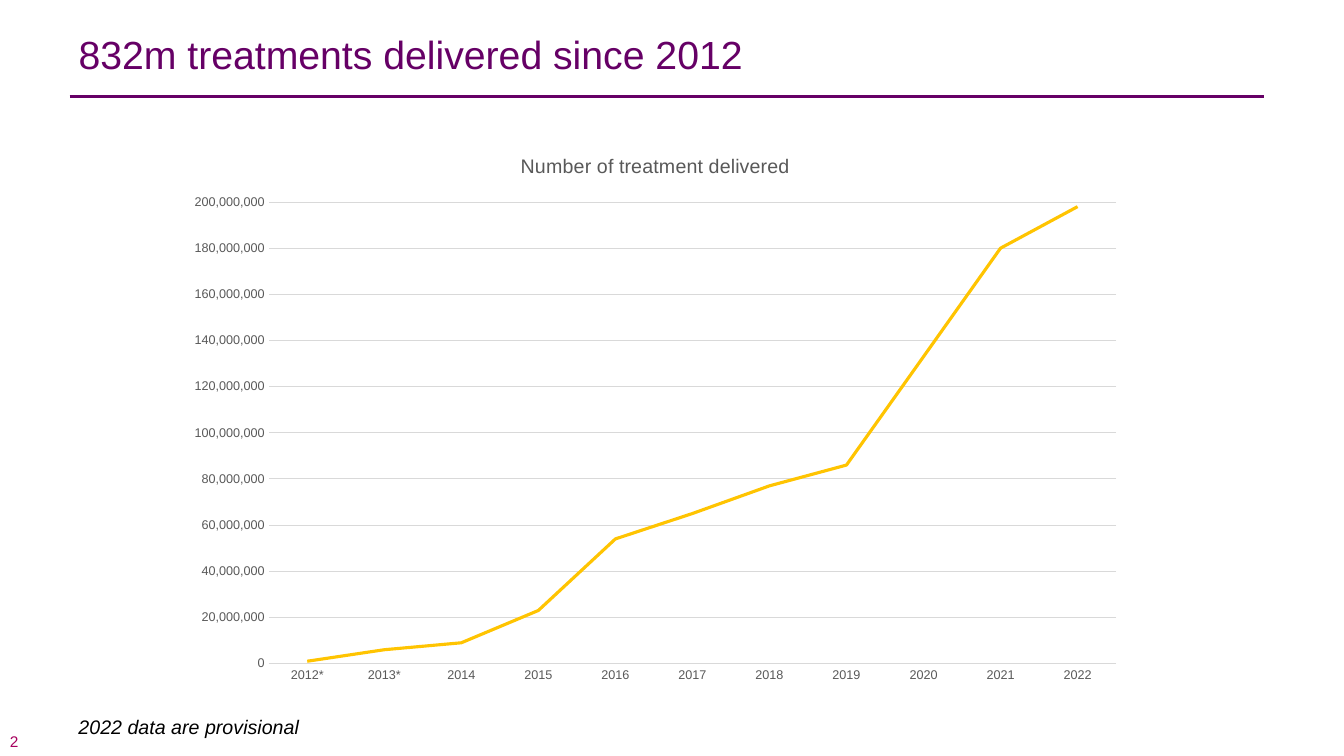
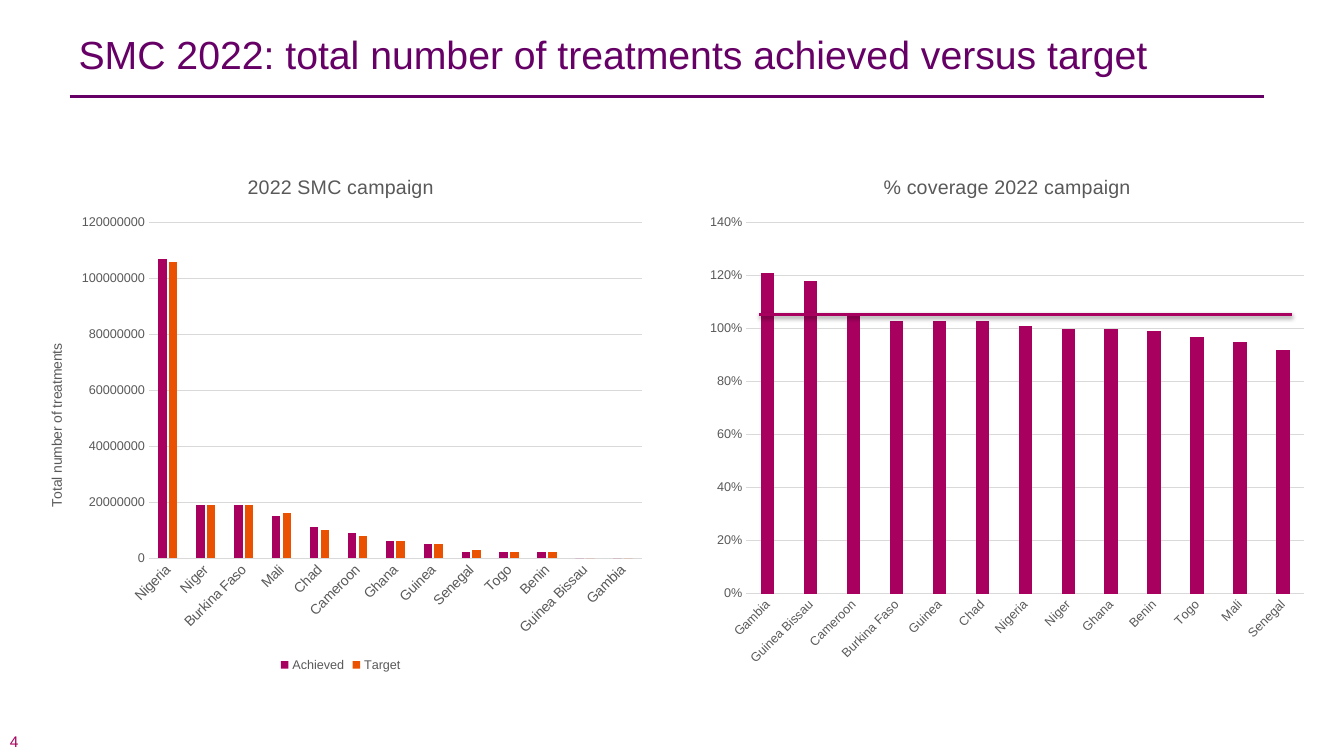
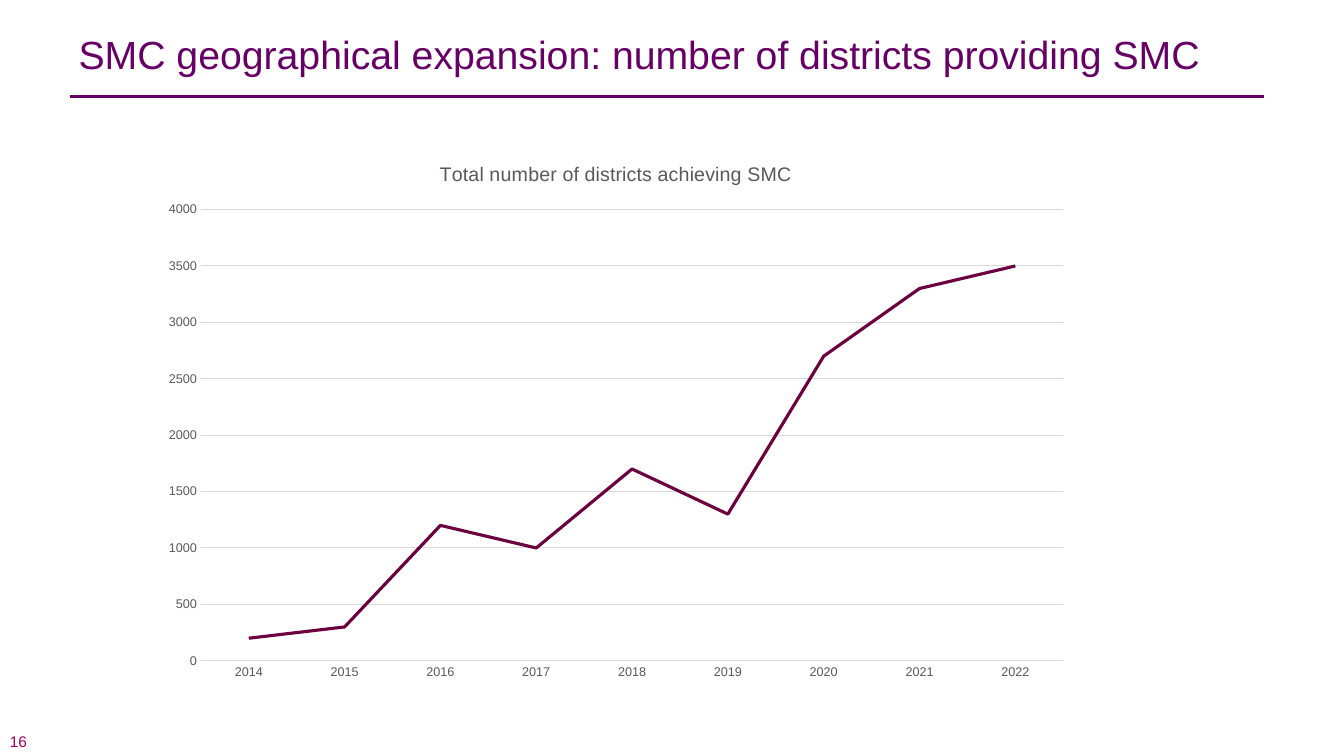
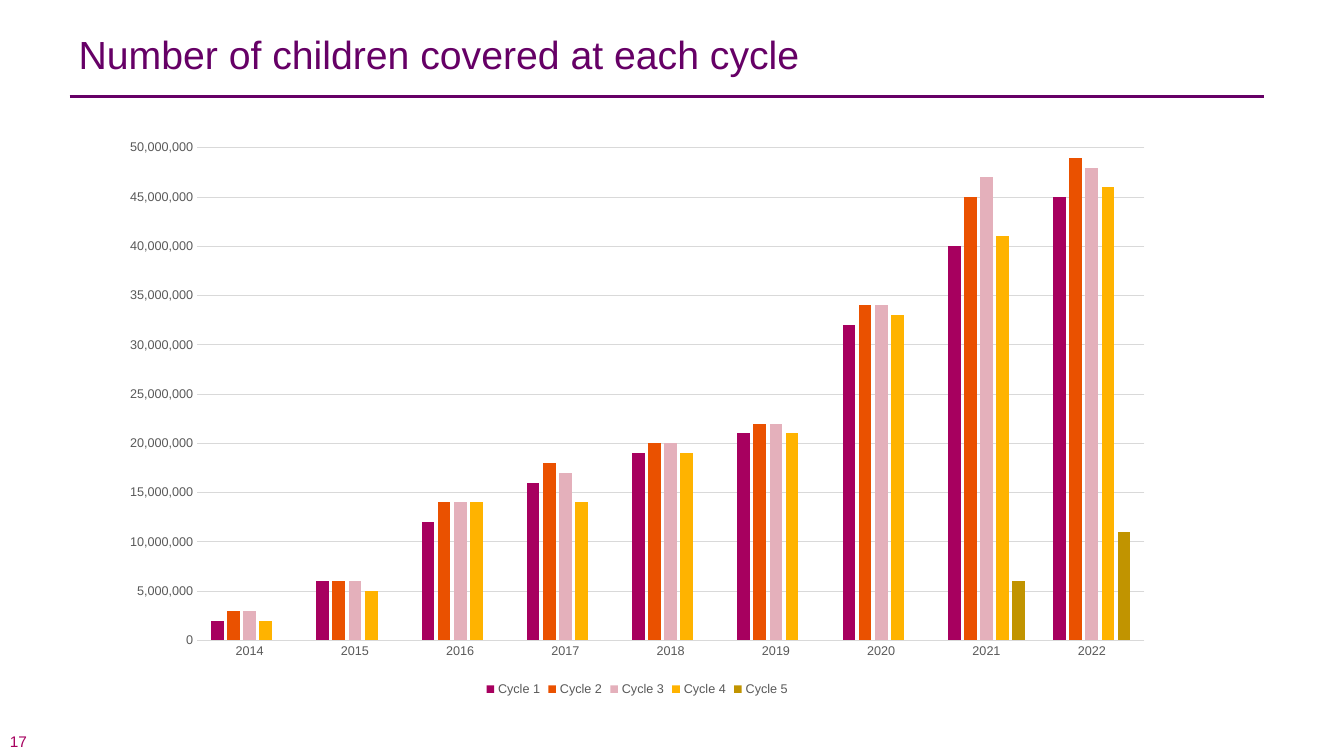
from lxml import etree
from pptx import Presentation
from pptx.chart.data import CategoryChartData
from pptx.dml.color import RGBColor
from pptx.enum.chart import XL_CHART_TYPE, XL_LEGEND_POSITION, XL_MARKER_STYLE, XL_TICK_MARK
from pptx.enum.shapes import MSO_CONNECTOR
from pptx.enum.text import MSO_ANCHOR, PP_ALIGN
from pptx.oxml.ns import qn
from pptx.util import Inches, Pt

LINE, COLUMN = XL_CHART_TYPE.LINE, XL_CHART_TYPE.COLUMN_CLUSTERED
BOTTOM = XL_LEGEND_POSITION.BOTTOM
NO_MARKER = XL_MARKER_STYLE.NONE
NO_TICK = XL_TICK_MARK.NONE
STRAIGHT = MSO_CONNECTOR.STRAIGHT
TOP, MIDDLE = MSO_ANCHOR.TOP, MSO_ANCHOR.MIDDLE
LEFT = PP_ALIGN.LEFT

PURPLE = RGBColor(0x66, 0x00, 0x66)
MAGENTA = RGBColor(0xA7, 0x00, 0x5F)
MAROON = RGBColor(0x6C, 0x00, 0x3E)
ORANGE = RGBColor(0xEA, 0x51, 0x00)
PINK = RGBColor(0xE4, 0xB0, 0xBB)
AMBER = RGBColor(0xFF, 0xB3, 0x00)
YELLOW = RGBColor(0xFF, 0xC4, 0x01)
OCHRE = RGBColor(0xC1, 0x94, 0x00)
BLACK = RGBColor(0x00, 0x00, 0x00)
GREY = RGBColor(0x59, 0x59, 0x59)
GRID = RGBColor(0xD9, 0xD9, 0xD9)

FONT = "Arial"
MILLION = 1_000_000
THOUSANDS = "#,##0"
PLAIN = "General"


def millions(*counts):
    return [None if count is None else count * MILLION for count in counts]


def years(first):
    return [str(year) for year in range(first, 2023)]


def set_font(font, size, color, italic=False):
    font.name, font.size, font.bold, font.italic = FONT, Pt(size), False, italic
    font.color.rgb = color


class Deck:
    """Holds the shared style and the slide being filled."""

    def __init__(self):
        self.prs = Presentation()
        self.prs.slide_width, self.prs.slide_height = Inches(13.33), Inches(7.5)
        self.slide = None

    def start_slide(self, title, number):
        self.slide = self.prs.slides.add_slide(self.prs.slide_layouts[5])
        heading = self.slide.shapes.title
        heading.left, heading.top = Inches(0.68), Inches(0.36)
        heading.width, heading.height = Inches(11.87), Inches(0.75)
        self.fill_frame(heading.text_frame, title, 28, PURPLE, TOP)
        heading.text_frame.paragraphs[0].line_spacing = Pt(26)
        self.rule(0.69, 12.54, 0.96, PURPLE)
        self.text(str(number), (0, 7.26, 1.06, 0.18), 11, MAGENTA, MIDDLE)

    def fill_frame(self, frame, words, size, color, anchor, italic=False):
        frame.word_wrap, frame.vertical_anchor = True, anchor
        paragraph = frame.paragraphs[0]
        paragraph.alignment = LEFT
        run = paragraph.add_run()
        run.text = words
        set_font(run.font, size, color, italic)

    def text(self, words, box, size, color, anchor=TOP, italic=False):
        frame = self.slide.shapes.add_textbox(*map(Inches, box)).text_frame
        self.fill_frame(frame, words, size, color, anchor, italic)

    def rule(self, left, right, y, color, shadow=False):
        rule = self.slide.shapes.add_connector(
            STRAIGHT, Inches(left), Inches(y), Inches(right), Inches(y))
        rule.line.color.rgb, rule.line.width = color, Pt(2)
        effects = etree.SubElement(rule.element.spPr, qn("a:effectLst"))
        if shadow:
            outer = etree.SubElement(effects, qn("a:outerShdw"), blurRad=str(Pt(3.1)),
                                     dist=str(Pt(1.6)), dir="5400000", rotWithShape="0")
            black = etree.SubElement(outer, qn("a:srgbClr"), val="000000")
            etree.SubElement(black, qn("a:alpha"), val="38000")

    def chart_title(self, owner, words, size):
        """Title a chart or an axis."""
        owner.has_title = True
        title = owner.chart_title if hasattr(owner, "chart_title") else owner.axis_title
        run = title.text_frame.paragraphs[0].add_run()
        run.text = words
        set_font(run.font, size, GREY)

    def chart(self, kind, box, categories, series, title=None, axis_title=None,
              number_format=PLAIN, maximum=None, legend=False, label_size=9, slanted=False):
        """Draw a chart; series is a list of (name, values, colour)."""
        data = CategoryChartData()
        data.categories = categories
        for name, values, _ in series:
            data.add_series(name, values)
        chart = self.slide.shapes.add_chart(kind, *map(Inches, box), data).chart
        set_font(chart.font, 10, BLACK)
        chart.has_title = False
        if title:
            self.chart_title(chart, title, 14)
        chart.has_legend = legend
        if legend:
            chart.legend.position, chart.legend.include_in_layout = BOTTOM, False
            set_font(chart.legend.font, 9, GREY)
        self.style_axes(chart, number_format, maximum, label_size)
        if axis_title:
            self.chart_title(chart.value_axis, axis_title, 10)
            self.rotate(chart, "c:valAx/c:title//a:bodyPr", -90)
        if slanted:
            self.rotate(chart, "c:catAx/c:txPr/a:bodyPr", -45)
        self.style_series(chart, kind, [color for _, _, color in series])

    def rotate(self, chart, body, degrees):
        for properties in chart.element.xpath("//" + body):
            properties.set("rot", str(degrees * 60000))
            properties.set("vert", "horz")

    def style_axes(self, chart, number_format, maximum, label_size):
        for axis, size in ((chart.category_axis, label_size), (chart.value_axis, 9)):
            axis.major_tick_mark = axis.minor_tick_mark = NO_TICK
            set_font(axis.tick_labels.font, size, GREY)
        value_axis = chart.value_axis
        value_axis.minimum_scale = 0
        if maximum:
            value_axis.maximum_scale = maximum
        value_axis.tick_labels.number_format = number_format
        value_axis.tick_labels.number_format_is_linked = False
        value_axis.format.line.fill.background()
        value_axis.has_major_gridlines = True
        for line in (value_axis.major_gridlines.format.line,
                     chart.category_axis.format.line):
            line.color.rgb, line.width = GRID, Pt(0.75)

    def style_series(self, chart, kind, colors):
        plot = chart.plots[0]
        plot.vary_by_categories = False
        if kind == COLUMN:
            plot.gap_width, plot.overlap = 219, -27
        for series, color in zip(plot.series, colors):
            if kind == LINE:
                series.smooth = False
                series.marker.style = NO_MARKER
                series.format.line.color.rgb = color
                series.format.line.width = Pt(2.25)
            else:
                series.invert_if_negative = False
                series.format.fill.solid()
                series.format.fill.fore_color.rgb = color


def treatments_delivered(deck):
    deck.start_slide("832m treatments delivered since 2012", 2)
    deck.text("2022 data are provisional", (0.68, 7.04, 9.72, 0.34), 14, BLACK, italic=True)
    delivered = millions(1, 6, 9, 23, 54, 65, 77, 86, 133, 180, 198)
    deck.chart(LINE, (1.74, 1.32, 9.52, 5.56), ["2012*", "2013*"] + years(2014),
               [("Series 1", delivered, YELLOW)], title="Number of treatment delivered",
               number_format=THOUSANDS, maximum=200 * MILLION)


def achieved_versus_target(deck):
    deck.start_slide("SMC 2022: total number of treatments achieved versus target", 4)
    coverage = {"Gambia": 1.21, "Guinea Bissau": 1.18, "Cameroon": 1.05,
                "Burkina Faso": 1.03, "Guinea": 1.03, "Chad": 1.03, "Nigeria": 1.01,
                "Niger": 1, "Ghana": 1, "Benin": 0.99, "Togo": 0.97, "Mali": 0.95,
                "Senegal": 0.92}
    deck.chart(COLUMN, (6.92, 1.54, 6.14, 5.17), list(coverage),
               [("Series 1", list(coverage.values()), MAGENTA)],
               title="% coverage 2022 campaign", number_format="0%", slanted=True)
    deck.rule(7.53, 12.81, 3.12, MAGENTA, shadow=True)

    countries = ["Nigeria", "Niger", "Burkina Faso", "Mali", "Chad", "Cameroon", "Ghana",
                 "Guinea", "Senegal", "Togo", "Benin", "Guinea Bissau", "Gambia"]
    achieved = millions(107, 19, 19, 15, 11, 9, 6, 5, 2, 2, 2, 0, 0)
    target = millions(106, 19, 19, 16, 10, 8, 6, 5, 3, 2, 2, 0, 0)
    deck.chart(COLUMN, (0.27, 1.54, 6.22, 5.17), countries,
               [("Achieved", achieved, MAGENTA), ("Target", target, ORANGE)],
               title="2022 SMC campaign", axis_title="Total number of treatments",
               legend=True, label_size=10, slanted=True)


def districts_providing(deck):
    deck.start_slide("SMC geographical expansion: number of districts providing SMC", 16)
    districts = [200, 300, 1200, 1000, 1700, 1300, 2700, 3300, 3500]
    deck.chart(LINE, (1.49, 1.4, 9.24, 5.45), years(2014),
               [("Series 1", districts, MAROON)],
               title="Total number of districts achieving SMC")


def children_covered(deck):
    deck.start_slide("Number of children covered at each cycle", 17)
    cycles = [
        ("Cycle 1", millions(2, 6, 12, 16, 19, 21, 32, 40, 45), MAGENTA),
        ("Cycle 2", millions(3, 6, 14, 18, 20, 22, 34, 45, 49), ORANGE),
        ("Cycle 3", millions(3, 6, 14, 17, 20, 22, 34, 47, 48), PINK),
        ("Cycle 4", millions(2, 5, 14, 14, 19, 21, 33, 41, 46), AMBER),
        ("Cycle 5", millions(*[None] * 7, 6, 11), OCHRE),
    ]
    deck.chart(COLUMN, (1.08, 1.28, 10.48, 5.67), years(2014), cycles,
               number_format=THOUSANDS, maximum=50 * MILLION, legend=True)


def main():
    deck = Deck()
    for build in (treatments_delivered, achieved_versus_target,
                  districts_providing, children_covered):
        build(deck)
    deck.prs.save("out.pptx")


if __name__ == "__main__":
    main()
